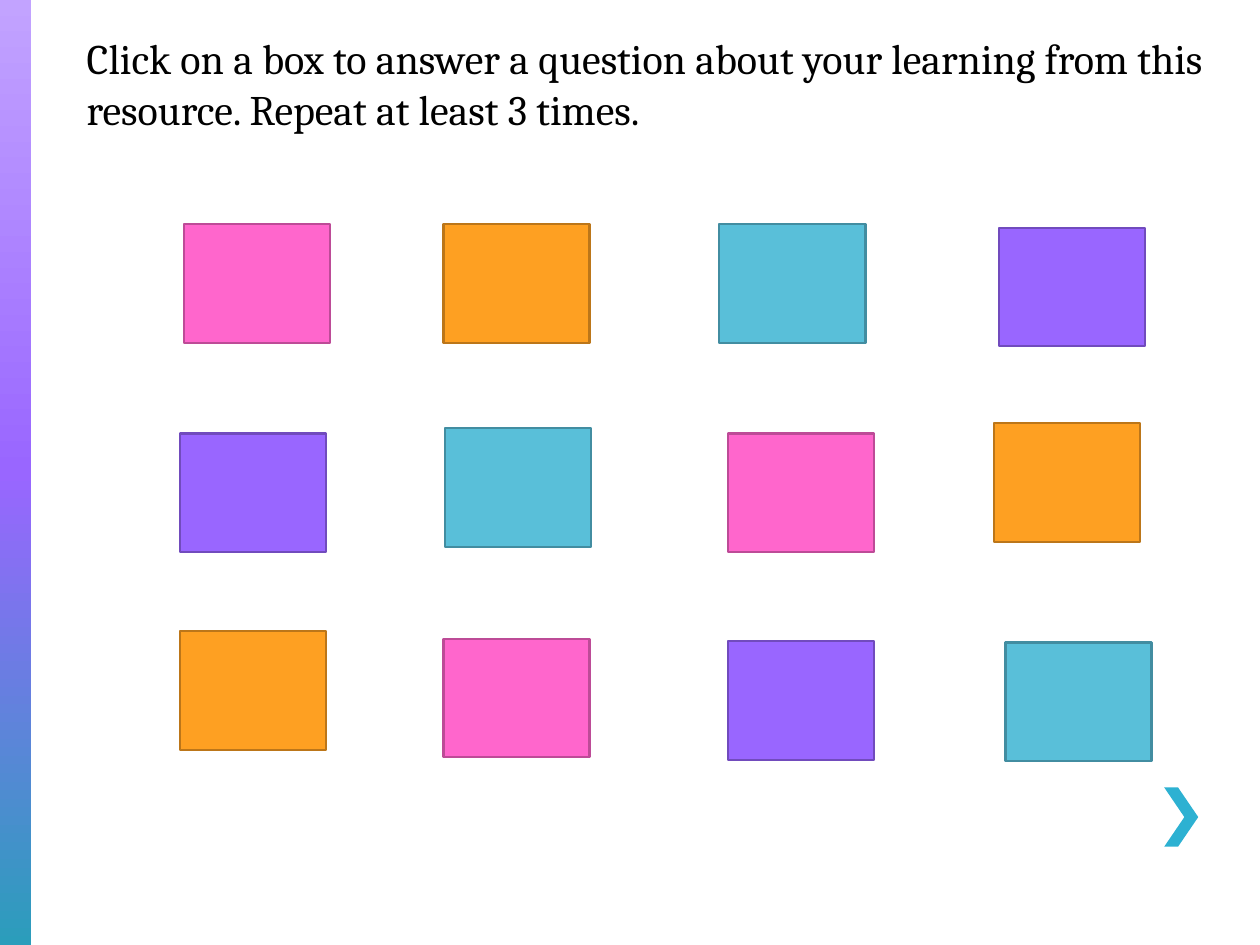
from copy import deepcopy
from dataclasses import dataclass

from pptx import Presentation
from pptx.dml.color import RGBColor as RGB
from pptx.enum.shapes import MSO_SHAPE as SHAPE
from pptx.enum.text import MSO_AUTO_SIZE as AUTO_SIZE
from pptx.oxml.ns import qn
from pptx.util import Inches, Pt


@dataclass(frozen=True)
class Theme:
    font: str = "Cambria"
    prompt_size: int = 24
    text: str = "000000"
    arrow: str = "2DB1D2"
    outline: float = 1.25
    # (fill, outline) of each box colour
    pink: tuple = ("FF66CC", "BD4B97")
    orange: tuple = ("FEA022", "BC7619")
    blue: tuple = ("59BFD9", "428DA1")
    purple: tuple = ("9966FF", "714BBD")
    # (position, colour) down the side bar
    bar_stops: tuple = ((0, "C2A3FF"), (0.5, "9966FF"), (1, "2B9DBB"))


THEME = Theme()
PROMPT = ("Click on a box to answer a question about your learning "
          "from this resource. Repeat at least 3 times.")
BOX_SIZE = (1.16, 0.94)
# Hand-placed boxes, row by row: left and top within the board, colour
QUESTION_BOXES = [
    (0.03, 0, THEME.pink), (2.09, 0, THEME.orange),
    (4.28, 0, THEME.blue), (6.5, 0.03, THEME.purple),
    (0, 1.66, THEME.purple), (2.1, 1.62, THEME.blue),
    (4.35, 1.66, THEME.pink), (6.46, 1.58, THEME.orange),
    (0, 3.23, THEME.orange), (2.09, 3.29, THEME.pink),
    (4.35, 3.31, THEME.purple), (6.55, 3.32, THEME.blue),
]


def add_rectangle(slide, left, top, width, height):
    rectangle = slide.shapes.add_shape(
        SHAPE.RECTANGLE, Inches(left), Inches(top), Inches(width), Inches(height))
    rectangle.shadow.inherit = False
    return rectangle


def add_side_bar(slide, left, top, width, height):
    bar = add_rectangle(slide, left, top, width, height)
    bar.line.fill.background()
    bar.fill.gradient()
    bar.fill.gradient_angle = 270  # counter-clockwise, so top to bottom
    stop_list = bar._element.spPr.find(qn("a:gradFill")).find(qn("a:gsLst"))
    stop_list.append(deepcopy(stop_list[-1]))
    for stop, (position, color) in zip(bar.fill.gradient_stops, THEME.bar_stops):
        stop.position = position
        stop.color.rgb = RGB.from_string(color)


def add_next_arrow(slide, left, top, width, height):
    thickness = 0.11
    middle = top + height / 2
    outline = [
        (left, top), (left + width - thickness, middle), (left, top + height),
        (left + thickness, top + height), (left + width, middle),
        (left + thickness, top),
    ]
    points = [(Inches(x), Inches(y)) for x, y in outline]
    builder = slide.shapes.build_freeform(*points[0], scale=1.0)
    builder.add_line_segments(points[1:], close=True)
    arrow = builder.convert_to_shape()
    arrow.shadow.inherit = False
    arrow.fill.solid()
    arrow.fill.fore_color.rgb = RGB.from_string(THEME.arrow)
    arrow.line.fill.background()


def add_prompt(slide, left, top, width, height):
    prompt = slide.shapes.add_textbox(
        Inches(left), Inches(top), Inches(width), Inches(height))
    frame = prompt.text_frame
    frame.word_wrap = True
    frame.auto_size = AUTO_SIZE.SHAPE_TO_FIT_TEXT
    paragraph = frame.paragraphs[0]
    paragraph.text = PROMPT
    paragraph.font.name = THEME.font
    paragraph.font.size = Pt(THEME.prompt_size)
    paragraph.font.color.rgb = RGB.from_string(THEME.text)


def add_question_board(slide, left, top):
    for x, y, (fill, outline) in QUESTION_BOXES:
        box = add_rectangle(slide, left + x, top + y, *BOX_SIZE)
        box.fill.solid()
        box.fill.fore_color.rgb = RGB.from_string(fill)
        box.line.color.rgb = RGB.from_string(outline)
        box.line.width = Pt(THEME.outline)


def main():
    presentation = Presentation()
    presentation.slide_width = Inches(10)
    presentation.slide_height = Inches(7.5)
    slide = presentation.slides.add_slide(presentation.slide_layouts[6])

    # Page furniture
    add_side_bar(slide, 0, 0, 0.25, 7.5)
    add_next_arrow(slide, 9.24, 6.25, 0.27, 0.47)

    # Activity
    add_prompt(slide, 0.59, 0.21, 9.06, 0.91)
    add_question_board(slide, 1.43, 1.78)

    presentation.save("out.pptx")


if __name__ == "__main__":
    main()
